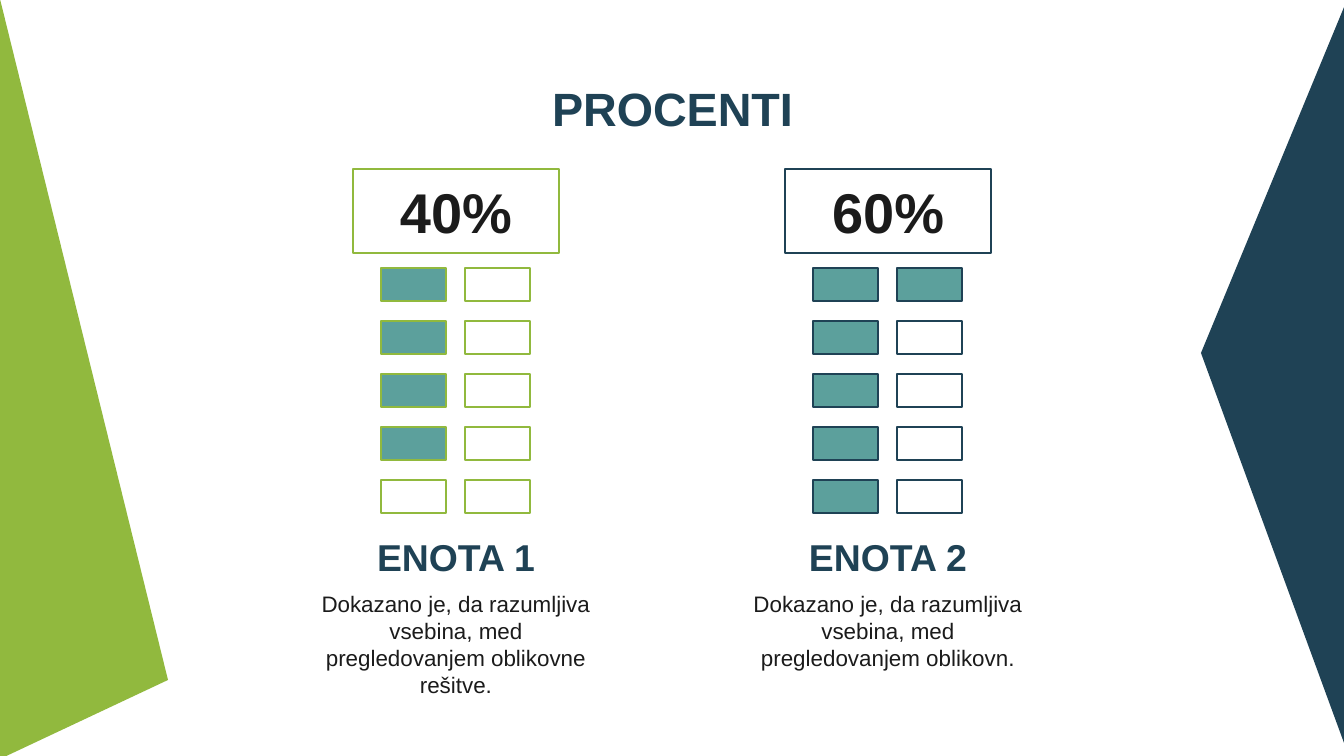
import pptx
import pptx.util
from pptx.dml.color import RGBColor
from pptx.enum.shapes import MSO_SHAPE
from pptx.enum.text import MSO_ANCHOR, PP_ALIGN

PX = 914400 / 134.4
GREEN = RGBColor(0x91, 0xB9, 0x3E)
NAVY = RGBColor(0x1F, 0x42, 0x55)
TEAL = RGBColor(0x5C, 0xA0, 0x9C)
WHITE = RGBColor(0xFF, 0xFF, 0xFF)
INK = RGBColor(0x1B, 0x1B, 0x1B)

UNITS = [
    (296, GREEN, 40, "ENOTA 1",
     "Dokazano je, da razumljiva vsebina, med pregledovanjem oblikovne rešitve."),
    (728, NAVY, 60, "ENOTA 2",
     "Dokazano je, da razumljiva vsebina, med pregledovanjem oblikovn."),
]


def emu(px):
    return pptx.util.Emu(round(px * PX))


def write(shape, text, size, color, bold=True, anchor=MSO_ANCHOR.TOP):
    frame = shape.text_frame
    frame.text = text
    frame.word_wrap = True
    frame.vertical_anchor = anchor
    frame.margin_left = frame.margin_right = pptx.util.Inches(0.1)
    frame.margin_top = frame.margin_bottom = pptx.util.Inches(0.1)
    paragraph = frame.paragraphs[0]
    paragraph.alignment = PP_ALIGN.CENTER
    font = paragraph.runs[0].font
    font.name = "Arial"
    font.size = pptx.util.Pt(size)
    font.bold = bold
    font.color.rgb = color


def add_label(slide, left, top, width, height, *args, **kwargs):
    label = slide.shapes.add_textbox(*map(emu, (left, top, width, height)))
    write(label, *args, **kwargs)


def add_box(slide, left, top, width, height, outline, fill=None):
    box = slide.shapes.add_shape(
        MSO_SHAPE.RECTANGLE, *map(emu, (left, top, width, height)))
    box.shadow.inherit = False
    if fill is None:
        box.fill.background()
    else:
        box.fill.solid()
        box.fill.fore_color.rgb = fill
    box.line.color.rgb = outline
    box.line.width = pptx.util.Pt(0.75)
    return box


def add_side_panel(slide, corners, color):
    start, *others = corners
    builder = slide.shapes.build_freeform(*start, scale=PX)
    builder.add_line_segments(others, close=True)
    panel = builder.convert_to_shape()
    panel.shadow.inherit = False
    panel.fill.solid()
    panel.fill.fore_color.rgb = color
    panel.line.fill.background()


def add_tally(slide, left, top, outline, percent):
    """Ten blocks in two columns, filled downwards, one for each ten percent."""
    for index in range(10):
        column, row = divmod(index, 5)
        fill = TEAL if index < percent // 10 else WHITE
        add_box(slide, left + 84 * column, top + 53 * row, 65, 33, outline, fill)


def add_unit(slide, left, top, width, outline, percent, heading, description):
    badge = add_box(slide, left + (width - 206) // 2, top, 206, 84, outline)
    write(badge, f"{percent}%", 30, INK, anchor=MSO_ANCHOR.MIDDLE)
    add_tally(slide, left + (width - 149) // 2, top + 99, outline, percent)
    add_label(slide, left, top + 359, width, 64, heading, 20, NAVY,
              anchor=MSO_ANCHOR.BOTTOM)
    add_label(slide, left, top + 408, width, 101, description, 12, INK, bold=False)


def main():
    presentation = pptx.Presentation()
    presentation.slide_width = emu(1344)
    presentation.slide_height = emu(756)
    slide = presentation.slides.add_slide(presentation.slide_layouts[6])

    add_side_panel(slide, [(0, -1), (168, 680), (0, 759)], GREEN)
    add_side_panel(slide, [(1347, 751), (1201, 353), (1347, 0)], NAVY)
    add_label(slide, 106, 66, 1133, 84, "PROCENTI", 25, NAVY)
    for left, *content in UNITS:
        add_unit(slide, left, 169, 320, *content)

    presentation.save("out.pptx")


if __name__ == "__main__":
    main()
